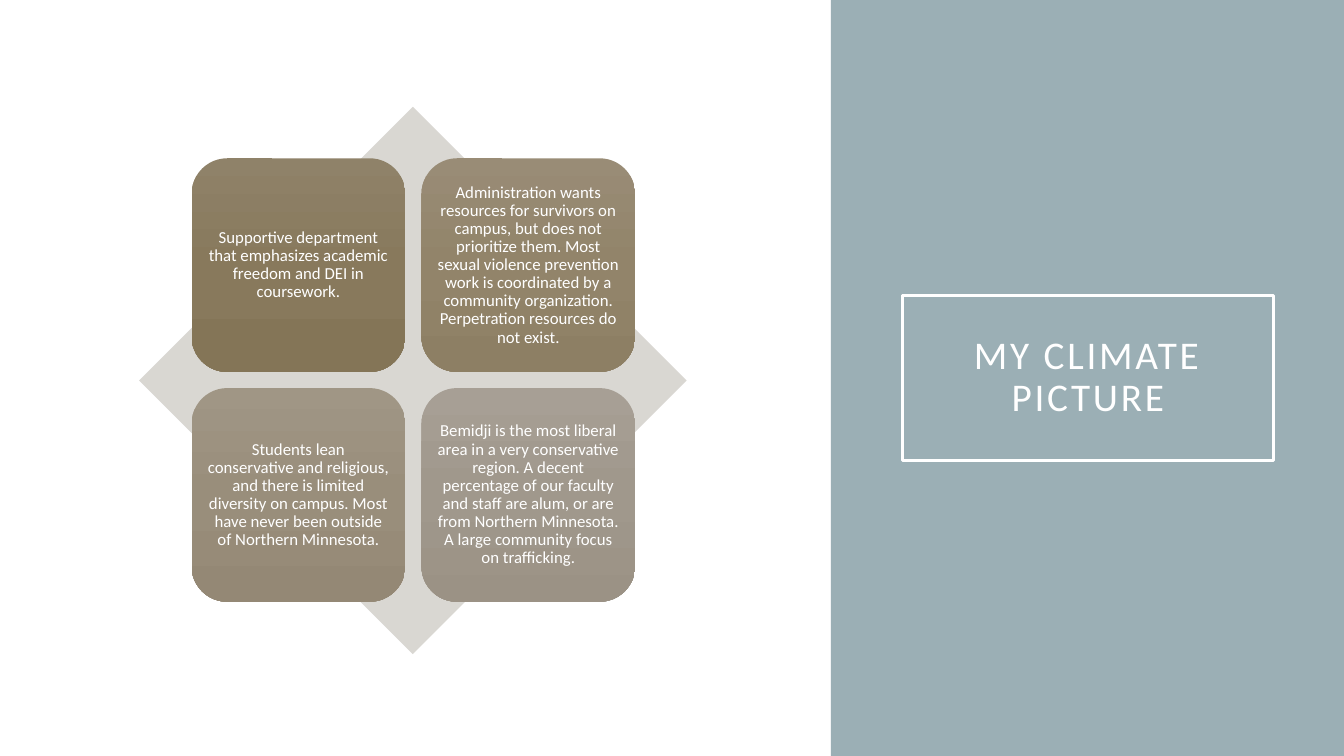
from copy import deepcopy

from pptx import Presentation
from pptx.dml.color import RGBColor
from pptx.enum.shapes import MSO_SHAPE
from pptx.enum.text import MSO_ANCHOR, MSO_AUTO_SIZE, PP_ALIGN
from pptx.util import Inches, Pt

WHITE = RGBColor(0xFF, 0xFF, 0xFF)
PANEL = RGBColor(0x9B, 0xAF, 0xB5)
DIAMOND = RGBColor(0xD9, 0xD7, 0xD2)

# Each card: text and its gradient from top to bottom
CARDS = [
    ("Supportive department that emphasizes academic freedom and DEI in coursework.",
     (RGBColor(0x8F, 0x82, 0x69), RGBColor(0x88, 0x79, 0x5C), RGBColor(0x84, 0x75, 0x57))),
    ("Administration wants resources for survivors on campus, but does not prioritize them. "
     "Most sexual violence prevention work is coordinated by a community organization. "
     "Perpetration resources do not exist.",
     (RGBColor(0x99, 0x8C, 0x76), RGBColor(0x92, 0x84, 0x6A), RGBColor(0x8D, 0x7F, 0x64))),
    ("Students lean conservative and religious, and there is limited diversity on campus. "
     "Most have never been outside of Northern Minnesota.",
     (RGBColor(0xA0, 0x96, 0x85), RGBColor(0x99, 0x8E, 0x7B), RGBColor(0x94, 0x88, 0x75))),
    ("Bemidji is the most liberal area in a very conservative region. A decent percentage "
     "of our faculty and staff are alum, or are from Northern Minnesota. "
     "A large community focus on trafficking.",
     (RGBColor(0xA7, 0x9F, 0x95), RGBColor(0xA0, 0x98, 0x8C), RGBColor(0x9B, 0x92, 0x85))),
]


def write_text(sp, text, size=12, inset=0.05, spacing=0):
    tf = sp.text_frame
    tf.word_wrap = True
    tf.auto_size = MSO_AUTO_SIZE.NONE
    tf.vertical_anchor = MSO_ANCHOR.MIDDLE
    tf.margin_left = tf.margin_right = Inches(inset)
    tf.margin_top = tf.margin_bottom = Inches(inset)
    p = tf.paragraphs[0]
    p.alignment = PP_ALIGN.CENTER
    p.line_spacing = 0.9
    r = p.add_run()
    r.text = text
    r.font.name = "Calibri"
    r.font.size = Pt(size)
    r.font.color.rgb = WHITE
    if spacing:
        r.font._element.set("spc", str(spacing * 100))


def add_plain(shape, left, top, width, height, color=None):
    sp = s.shapes.add_shape(shape, Inches(left), Inches(top), Inches(width), Inches(height))
    sp.shadow.inherit = False
    sp.line.fill.background()
    if color is not None:
        sp.fill.solid()
        sp.fill.fore_color.rgb = color
    return sp


prs = Presentation()
prs.slide_width, prs.slide_height = Inches(13.33), Inches(7.5)
s = prs.slides.add_slide(prs.slide_layouts[5])

# Side panel, with the framed title in front of it
panel = add_plain(MSO_SHAPE.RECTANGLE, 8.24, 0, 5.09, 7.5, PANEL)
title = s.shapes.title
panel._element.addnext(title._element)
title.left, title.top = Inches(8.95), Inches(2.93)
title.width, title.height = Inches(3.68), Inches(1.64)
title.line.color.rgb = WHITE
title.line.width = Pt(2.5)
write_text(title, "MY CLIMATE PICTURE", size=28, inset=0.2, spacing=2)

# Diamond behind the cards
add_plain(MSO_SHAPE.DIAMOND, 1.38, 1.06, 5.43, 5.43, DIAMOND)

# Two by two grid of cards
CARD, PITCH = 2.12, 2.28
for i, (text, colors) in enumerate(CARDS):
    row, col = divmod(i, 2)
    card = add_plain(MSO_SHAPE.ROUNDED_RECTANGLE,
                     1.9 + col * PITCH, 1.57 + row * PITCH, CARD, CARD)
    card.fill.gradient()
    card.fill.gradient_angle = 270
    first = card.fill.gradient_stops[0]._gs
    first.addnext(deepcopy(first))
    for stop, color, position in zip(card.fill.gradient_stops, colors, (0, 0.5, 1)):
        stop.color.rgb = color
        stop.position = position
    write_text(card, text)

prs.save("out.pptx")
